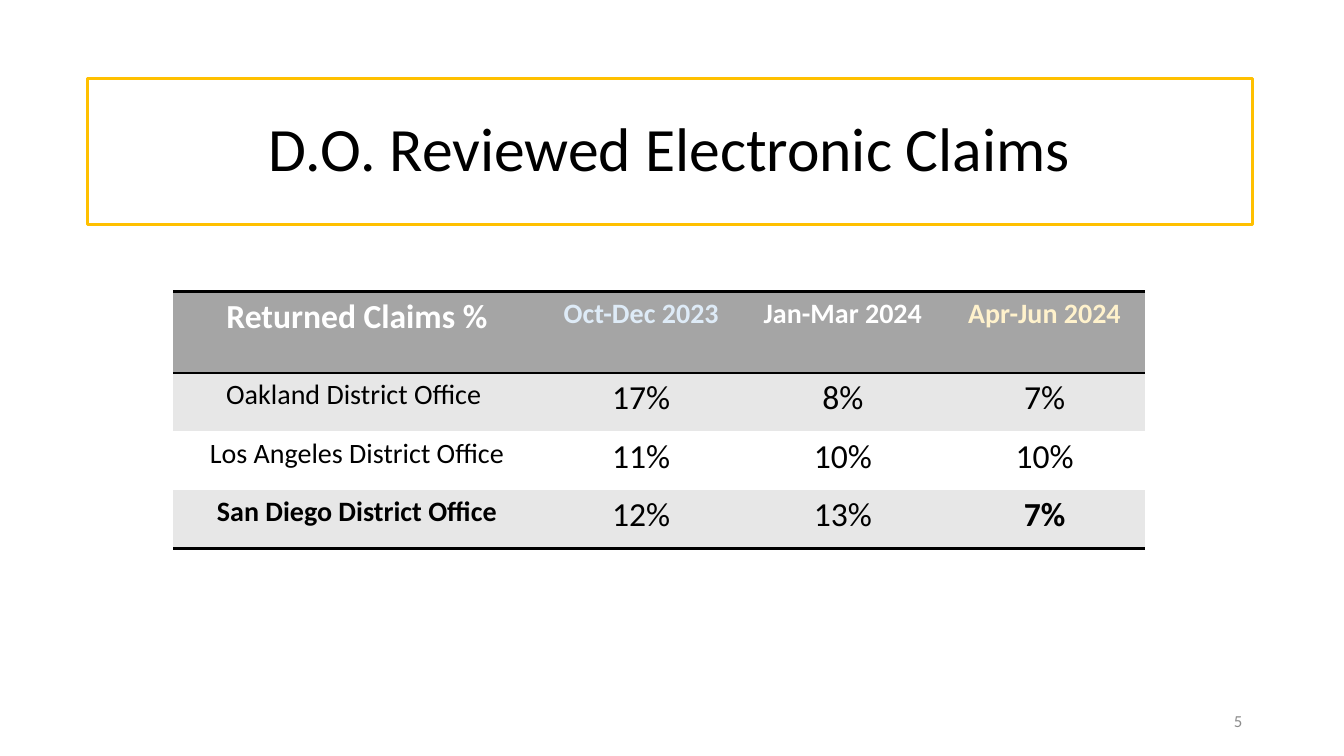
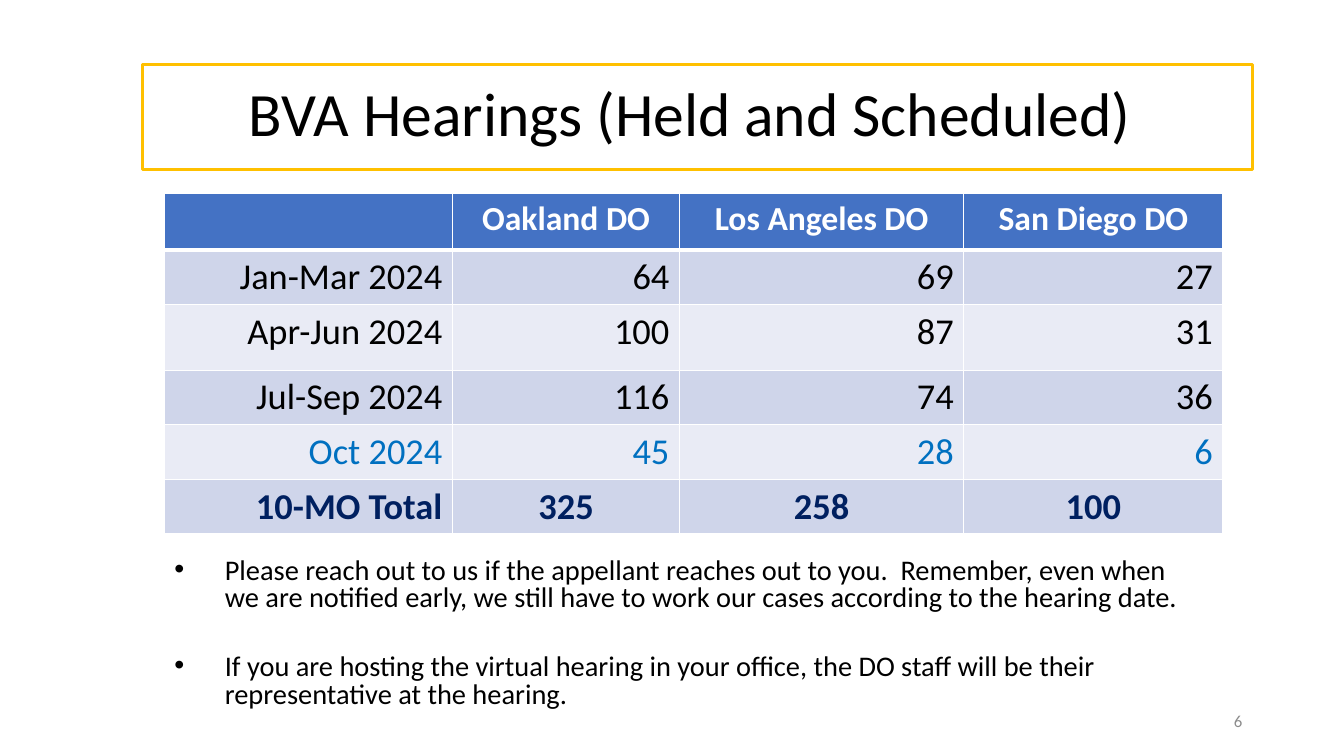
from dataclasses import dataclass

from lxml import etree
from pptx import Presentation
from pptx import util as u
from pptx.dml.color import RGBColor
from pptx.enum import text
from pptx.oxml.ns import qn

ALIGN = text.PP_ALIGN
NO_GRID_STYLE = "{2D5ABB26-0587-4C30-8999-92F81FD0307C}"


@dataclass(frozen=True)
class Theme:
    font: str = "Calibri"
    black: str = "000000"
    white: str = "FFFFFF"
    gold: str = "FFC000"
    number_gray: str = "8C8C8C"
    header_gray: str = "A5A5A5"
    band_gray: str = "E7E7E7"
    pale_blue: str = "DEEBF7"
    pale_yellow: str = "FFF2CC"
    header_blue: str = "4472C4"
    band_blue: str = "CFD5EA"
    band_light: str = "E9EBF5"
    current_blue: str = "0070C0"
    total_navy: str = "002060"
    title_size: float = 44
    number_size: float = 12
    large: float = 26
    medium: float = 24
    small: float = 20
    bullet_size: float = 20.3
    frame_width: float = 2.25


THEME = Theme()

CLAIMS = {
    "box": (1.72, 2.89),
    "columns": (3.64, 2, 2, 2),
    "heights": (0.81, 0.58, 0.58, 0.58),
    "rows": [
        ("Returned Claims %", "Oct-Dec 2023", "Jan-Mar 2024", "Apr-Jun 2024"),
        ("Oakland District Office ", "17%", "8%", "7%"),
        ("Los Angeles District Office", "11%", "10%", "10%"),
        ("San Diego District Office", "12%", "13%", "7%"),
    ],
}

HEARINGS = {
    "box": (1.63, 1.92),
    "columns": (2.86, 2.25, 2.82, 2.57),
    "heights": (0.56, 0.54, 0.65, 0.54, 0.54, 0.54),
    "rows": [
        ("", "Oakland DO", "Los Angeles DO", "San Diego DO"),
        ("Jan-Mar 2024", "64", "69", "27"),
        ("Apr-Jun 2024", "100", "87", "31"),
        ("Jul-Sep 2024", "116", "74", "36"),
        ("Oct 2024", "45", "28", "6"),
        ("10-MO Total", "325", "258", "100"),
    ],
}

REMINDERS = [
    "Please reach out to us if the appellant reaches out to you.  Remember, even when "
    "we are notified early, we still have to work our cases according to the hearing date.",
    "If you are hosting the virtual hearing in your office, the DO staff will be their "
    "representative at the hearing.",
]


def place(shape, box):
    for name, value in zip(("left", "top", "width", "height"), box):
        setattr(shape, name, u.Inches(value))


def write(paragraph, content, size, color, bold=False, **layout):
    paragraph.text = content
    for name, value in layout.items():
        setattr(paragraph, name, value)
    font = paragraph.font
    for name, value in {"name": THEME.font, "size": u.Pt(size), "bold": bold}.items():
        setattr(font, name, value)
    font.color.rgb = RGBColor.from_string(color)


def prepare_frame(shape, anchor):
    frame = shape.text_frame
    settings = {"word_wrap": True, "auto_size": text.MSO_AUTO_SIZE.NONE, "vertical_anchor": anchor}
    for name, value in settings.items():
        setattr(frame, name, value)
    return frame


def add_slide(presentation, layout, title, title_box, number):
    slide = presentation.slides.add_slide(presentation.slide_layouts[layout])
    shape = slide.shapes.title
    place(shape, title_box)
    shape.line.color.rgb = RGBColor.from_string(THEME.gold)
    shape.line.width = u.Pt(THEME.frame_width)
    frame = prepare_frame(shape, text.MSO_ANCHOR.MIDDLE)
    write(frame.paragraphs[0], title, THEME.title_size, THEME.black,
          alignment=ALIGN.CENTER, line_spacing=0.9)
    number_box = slide.shapes.add_textbox(*map(u.Inches, (9.42, 6.95, 3, 0.4)))
    frame = prepare_frame(number_box, text.MSO_ANCHOR.MIDDLE)
    write(frame.paragraphs[0], str(number), THEME.number_size, THEME.number_gray,
          alignment=ALIGN.RIGHT)
    return slide


def add_borders(cell, borders):
    properties = cell._tc.get_or_add_tcPr()
    for side in "LRTB":
        if side in borders:
            color, width = borders[side]
            line = etree.SubElement(properties, qn(f"a:ln{side}"), w=str(u.Pt(width)))
            fill = etree.SubElement(line, qn("a:solidFill"))
            etree.SubElement(fill, qn("a:srgbClr"), val=color)


def add_table(slide, data, style_cell):
    rows, columns, heights = data["rows"], data["columns"], data["heights"]
    box = (*data["box"], sum(columns), sum(heights))
    table = slide.shapes.add_table(len(rows), len(columns), *map(u.Inches, box)).table
    table._tbl.tblPr.find(qn("a:tableStyleId")).text = NO_GRID_STYLE
    for column, width in zip(table.columns, columns):
        column.width = u.Inches(width)
    for row, height in zip(table.rows, heights):
        row.height = u.Inches(height)
    for i, row in enumerate(rows):
        for j, content in enumerate(row):
            cell = table.cell(i, j)
            fill, borders, style = style_cell(i, j)
            add_borders(cell, borders)
            cell.fill.solid()
            cell.fill.fore_color.rgb = RGBColor.from_string(fill)
            write(cell.text_frame.paragraphs[0], content, **style)


def claims_style(i, j):
    header, last = i == 0, i == len(CLAIMS["rows"]) - 1
    rule = (THEME.black, 2)
    borders = {"T": rule, "B": rule} if header else {"B": rule} if last else {}
    header_colors = (THEME.white, THEME.pale_blue, THEME.white, THEME.pale_yellow)
    fill = THEME.header_gray if header else THEME.band_gray if i % 2 else THEME.white
    return fill, borders, {
        "size": THEME.medium if header == (j == 0) else THEME.small,
        "color": header_colors[j] if header else THEME.black,
        "bold": header or (last and j in (0, 3)),
        "alignment": ALIGN.CENTER,
    }


def hearings_style(i, j):
    header, total = i == 0, i == len(HEARINGS["rows"]) - 1
    thin = (THEME.white, 1)
    borders = {"L": thin, "R": thin, "B": (THEME.white, 3) if header else thin}
    if header:
        borders["T"] = thin
    row_colors = {0: THEME.white, 4: THEME.current_blue, 5: THEME.total_navy}
    fill = THEME.header_blue if header else THEME.band_blue if i % 2 else THEME.band_light
    return fill, borders, {
        "size": THEME.medium if header else THEME.large,
        "color": row_colors.get(i, THEME.black),
        "bold": header or total,
        "alignment": ALIGN.CENTER if header or (total and j) else ALIGN.RIGHT,
    }


def add_reminders(slide):
    body = slide.placeholders[1]
    place(body, (1.63, 5.49, 10.25, 1.44))
    frame = prepare_frame(body, text.MSO_ANCHOR.TOP)
    indent = u.Inches(0.5)
    for i, content in enumerate(REMINDERS):
        paragraph = frame.add_paragraph() if i else frame.paragraphs[0]
        properties = paragraph._p.get_or_add_pPr()
        properties.set("marL", str(indent))
        properties.set("indent", str(-indent))
        etree.SubElement(properties, qn("a:buFont"), typeface="Arial")
        etree.SubElement(properties, qn("a:buChar"), char="•")
        write(paragraph, content, THEME.bullet_size, THEME.black,
              line_spacing=0.8, space_before=u.Pt(30 if i else 0))


def main():
    presentation = Presentation()
    presentation.slide_width = u.Inches(13.33)
    presentation.slide_height = u.Inches(7.5)
    claims = add_slide(presentation, 5, "D.O. Reviewed Electronic Claims",
                       (0.87, 0.78, 11.55, 1.45), 5)
    add_table(claims, CLAIMS, claims_style)
    hearings = add_slide(presentation, 1, "BVA Hearings (Held and Scheduled) ",
                         (1.41, 0.64, 11.01, 1.04), 6)
    add_table(hearings, HEARINGS, hearings_style)
    add_reminders(hearings)
    presentation.save("out.pptx")


if __name__ == "__main__":
    main()
